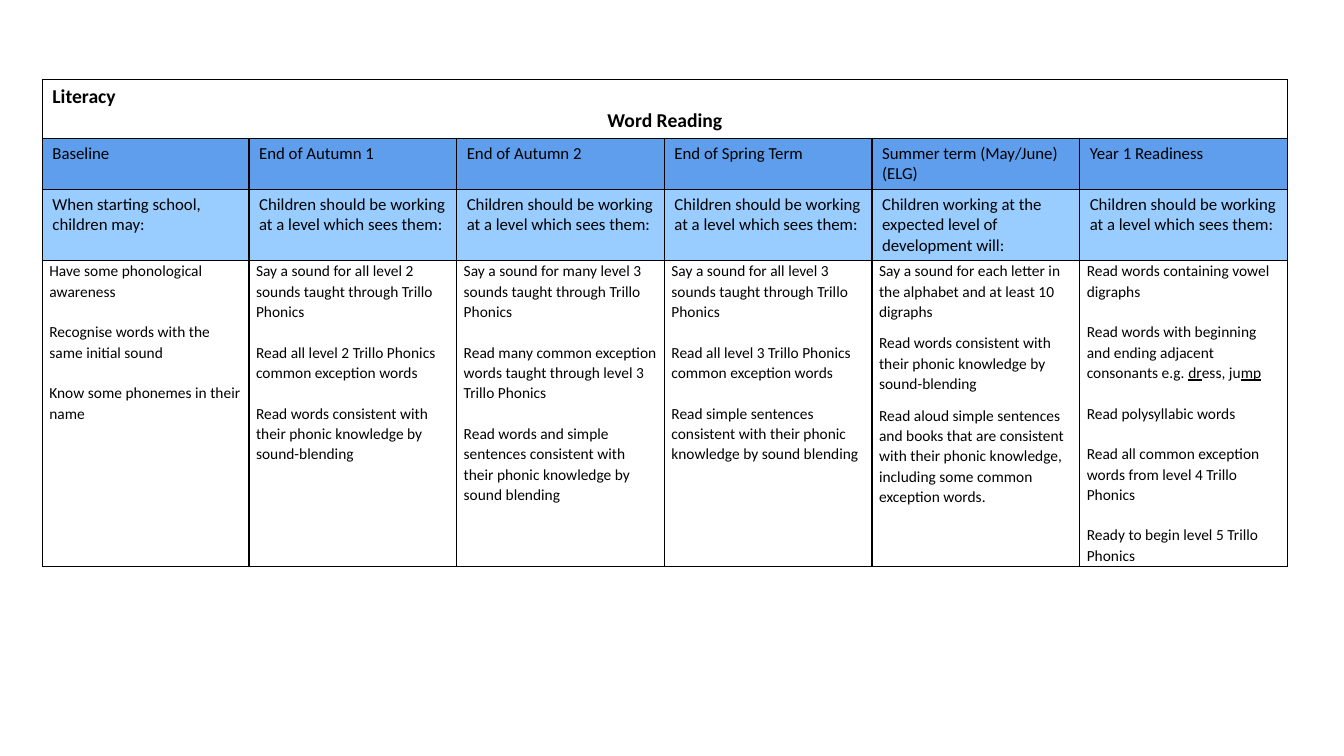
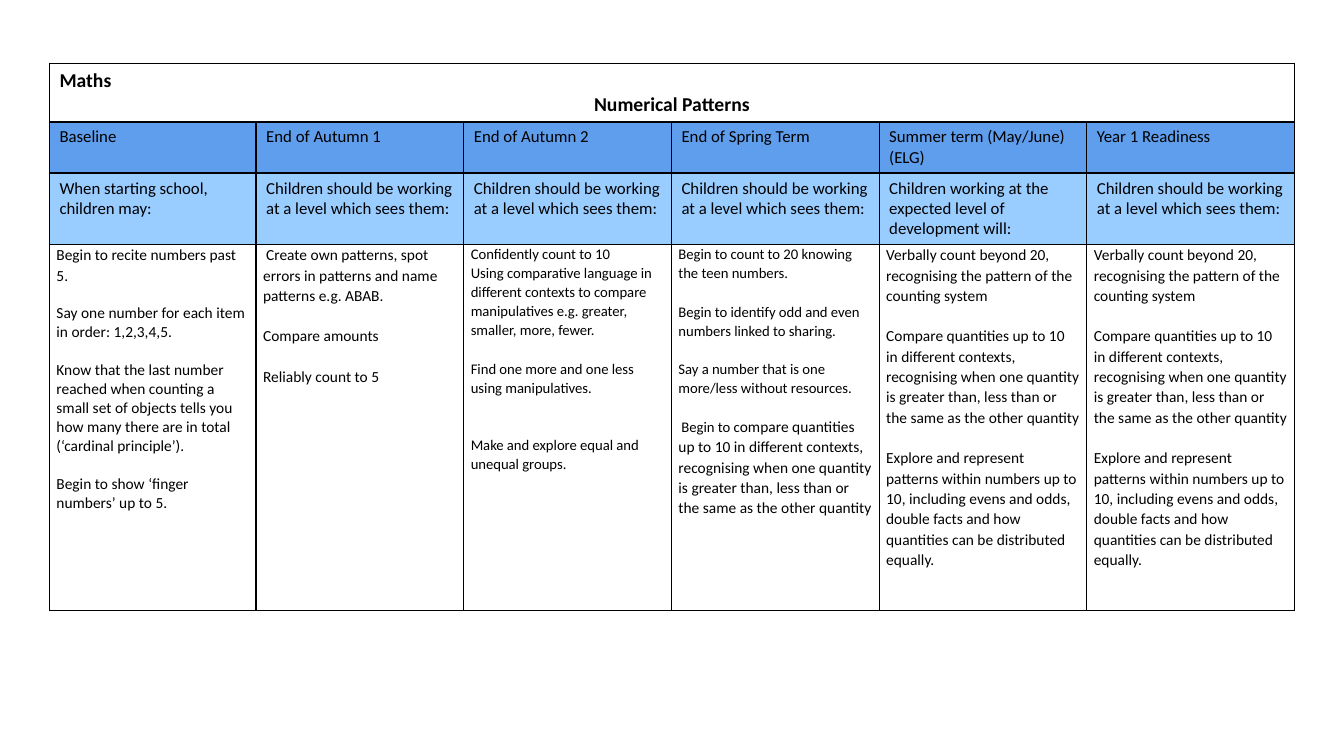
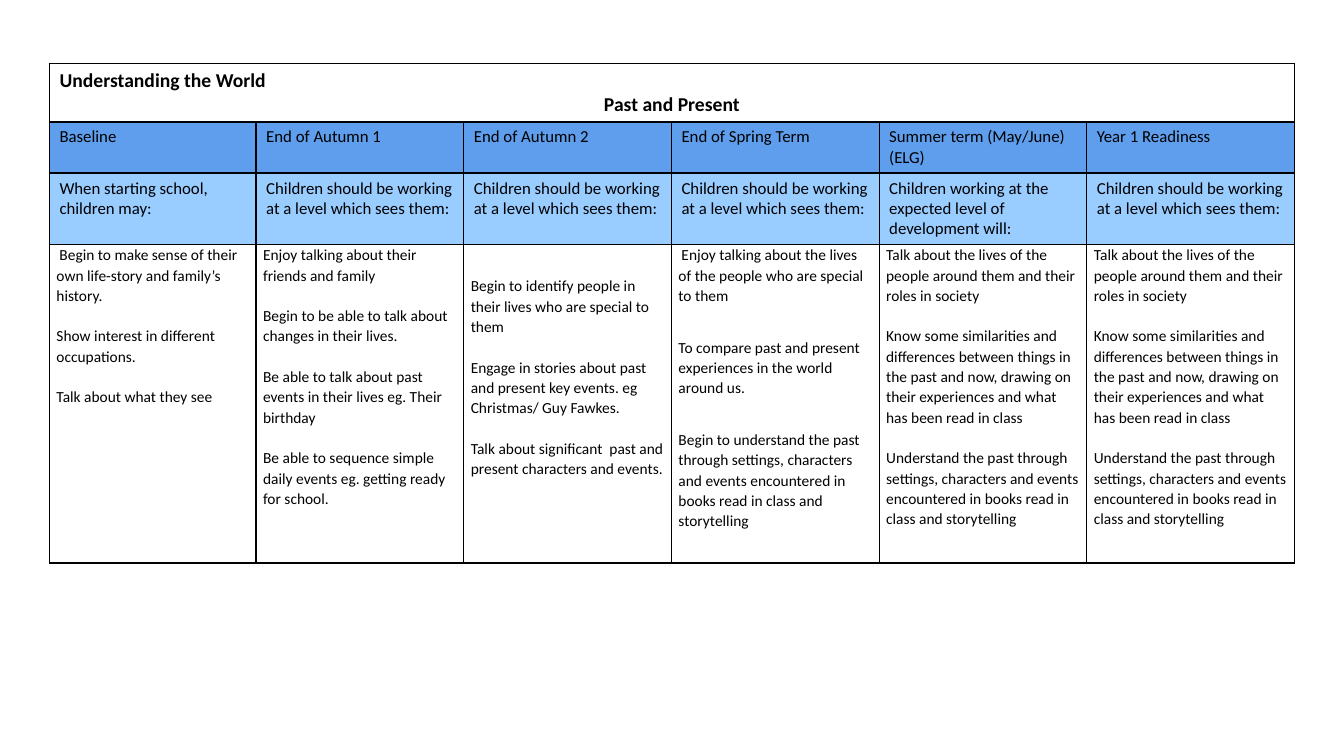
from dataclasses import dataclass, replace

from lxml.etree import SubElement
from pptx import Presentation
from pptx.dml.color import RGBColor
from pptx.enum.text import PP_ALIGN
from pptx.oxml.ns import qn
from pptx.util import Inches, Pt


@dataclass(frozen=True)
class Theme:
    font: str = "Calibri"
    ink: str = "000000"
    stage: str = "5E9EEC"
    lead: str = "99CCFF"
    title_size: float = 14
    head_size: float = 12
    body_size: float = 11
    small_size: float = 10.5
    line: float = 1.07
    border: float = 1


THEME = Theme()


@dataclass(frozen=True)
class Para:
    runs: str | tuple          # plain text, or (text, size, underline) runs
    gap: float = 14.5          # points above the paragraph
    size: float = THEME.body_size
    line: float = THEME.line
    indent: float = 0          # first line, inches


@dataclass(frozen=True)
class Goals:
    paras: tuple
    top: float = 0             # inches above the first paragraph


def goals(*items, top=0, **style):
    """Column of goals; the style applies to those given as plain text."""
    return Goals(tuple(i if isinstance(i, Para) else Para(i, **style)
                       for i in items), top)


# Content
SEES = "Children should be working at a level which sees them:"
STAGES = [
    ("Baseline", "When starting school, children may:"),
    ("End of Autumn 1", SEES),
    ("End of Autumn 2", SEES),
    ("End of Spring Term", SEES),
    ("Summer term (May/June) (ELG)",
     "Children working at the expected level of development will:"),
    ("Year 1 Readiness", SEES),
]

BODY, SMALL = THEME.body_size, THEME.small_size

WORD_READING = [
    goals("Have some phonological awareness",
          "Recognise words with the same initial sound",
          "Know some phonemes in their name"),
    goals("Say a sound for all level 2 sounds taught through Trillo Phonics",
          "Read all level 2 Trillo Phonics common exception words",
          "Read words consistent with their phonic knowledge by sound-blending"),
    goals("Say a sound for many level 3 sounds taught through Trillo Phonics",
          "Read many common exception words taught through level 3 Trillo Phonics",
          "Read words and simple sentences consistent with their phonic "
          "knowledge by sound blending"),
    goals("Say a sound for all level 3 sounds taught through Trillo Phonics",
          "Read all level 3 Trillo Phonics common exception words",
          "Read simple sentences consistent with their phonic knowledge by "
          "sound blending"),
    goals("Say a sound for each letter in the alphabet and at least 10 digraphs",
          "Read words consistent with their phonic knowledge by sound-blending",
          "Read aloud simple sentences and books that are consistent with their "
          "phonic knowledge, including some common exception words.",
          gap=8),
    goals("Read words containing vowel digraphs",
          Para((("Read words with beginning and ending adjacent consonants e.g. ",
                 BODY, False),
                ("dr", BODY, True), ("ess, ju", BODY, False), ("mp", BODY, True))),
          "Read polysyllabic words",
          "Read all common exception words from level 4 Trillo Phonics",
          "Ready to begin level 5 Trillo Phonics"),
]

PATTERN_GOALS = goals(
    "Verbally count beyond 20, recognising the pattern of the counting system",
    "Compare quantities up to 10 in different contexts, recognising when one "
    "quantity is greater than, less than or the same as the other quantity",
    "Explore and represent patterns within numbers up to 10, including evens "
    "and odds, double facts and how quantities can be distributed equally.")

NUMERICAL_PATTERNS = [
    goals(Para("Begin to recite numbers past 5."),
          "Say one number for each item in order: 1,2,3,4,5.",
          "Know that the last number reached when counting a small set of objects "
          "tells you how many there are in total (‘cardinal principle’).",
          "Begin to show ‘finger numbers’ up to 5.",
          gap=13.5, line=1),
    goals(Para("Create own patterns, spot errors in patterns and name patterns "
               "e.g. ABAB.", indent=0.03),
          "Compare amounts",
          "Reliably count to 5"),
    goals("Confidently count to 10",
          Para("Using comparative language in different contexts to compare "
               "manipulatives e.g. greater, smaller, more, fewer.",
               gap=0, size=SMALL),
          "Find one more and one less using manipulatives.",
          Para("Make and explore equal and unequal groups.", gap=27.5, size=SMALL),
          gap=13.7, size=SMALL),
    goals("Begin to count to 20 knowing the teen numbers.",
          "Begin to identify odd and even numbers linked to sharing.",
          "Say a number that is one more/less without resources.",
          Para((("Begin to c", SMALL, False),
                ("ompare quantities up to 10 in different contexts, recognising "
                 "when one quantity is greater than, less than or the same as the "
                 "other quantity", BODY, False)), gap=13.7, indent=0.03),
          gap=13.7, size=SMALL),
    PATTERN_GOALS,
    PATTERN_GOALS,
]

PAST_GOALS = goals(
    "Talk about the lives of the people around them and their roles in society",
    "Know some similarities and differences between things in the past and now, "
    "drawing on their experiences and what has been read in class",
    "Understand the past through settings, characters and events encountered in "
    "books read in class and storytelling")

PAST_AND_PRESENT = [
    goals(Para("Begin to make sense of their own life-story and family’s history.",
               indent=0.03),
          "Show interest in different occupations.",
          "Talk about what they see"),
    goals("Enjoy talking about their friends and family",
          "Begin to be able to talk about changes in their lives.",
          "Be able to talk about past events in their lives eg. Their birthday",
          "Be able to sequence simple daily events eg. getting ready for school."),
    goals("Begin to identify people in their lives who are special to them",
          "Engage in stories about past and present key events. eg Christmas/ "
          "Guy Fawkes.",
          "Talk about significant  past and present characters and events.",
          top=0.31),
    goals(Para("Enjoy talking about the lives of the people who are special to them",
               indent=0.03),
          "To compare past and present experiences in the world around us.",
          "Begin to understand the past through settings, characters and events "
          "encountered in books read in class and storytelling",
          gap=22.5),
    PAST_GOALS,
    PAST_GOALS,
]

# Area, strand, left, top, height of the goals row, goals by stage
SLIDES = [
    ("Literacy", "Word Reading", 0.42, 0.79, 3.03, WORD_READING),
    ("Maths", "Numerical Patterns", 0.49, 0.63, 3.63, NUMERICAL_PATTERNS),
    ("Understanding the World", "Past and Present", 0.49, 0.63, 3.16,
     PAST_AND_PRESENT),
]
COL_WIDTHS = [2.05] + [2.06] * (len(STAGES) - 1)
HEAD_HEIGHTS = [0.58, 0.5, 0.71]


# Cell helpers
def add_run(p, text, size, bold=False, underline=False):
    r = p.add_run()
    r.text = text
    f = r.font
    f.name, f.size, f.bold = THEME.font, Pt(size), bold
    f.color.rgb = RGBColor.from_string(THEME.ink)
    if underline:
        f.underline = True


def frame_cell(cell, fill=None):
    """Draw the four borders, then the fill."""
    tcPr = cell._tc.get_or_add_tcPr()
    for side in ("a:lnL", "a:lnR", "a:lnT", "a:lnB"):
        ln = SubElement(tcPr, qn(side), w=str(Pt(THEME.border)))
        SubElement(SubElement(ln, qn("a:solidFill")), qn("a:srgbClr"),
                   val=THEME.ink)
    if fill:
        cell.fill.solid()
        cell.fill.fore_color.rgb = RGBColor.from_string(fill)
    else:
        cell.fill.background()


def write_goals(cell, column):
    cell.margin_left = cell.margin_right = Inches(0.07)
    cell.margin_top, cell.margin_bottom = Inches(column.top), 0
    tf = cell.text_frame
    first = replace(column.paras[0], gap=0)
    for i, para in enumerate((first, *column.paras[1:])):
        p = tf.add_paragraph() if i else tf.paragraphs[0]
        p.line_spacing = para.line
        p.space_before = Pt(para.gap)
        if para.indent:
            p._p.get_or_add_pPr().set("indent", str(Inches(para.indent)))
        runs = para.runs
        if isinstance(runs, str):
            runs = ((runs, para.size, False),)
        for text, size, underline in runs:
            add_run(p, text, size, underline=underline)


# One slide: title row, two header rows, goals row
def add_stage_slide(prs, area, strand, left, top, goals_height, columns):
    s = prs.slides.add_slide(prs.slide_layouts[6])
    heights = HEAD_HEIGHTS + [goals_height]
    table = s.shapes.add_table(
        len(heights), len(STAGES), Inches(left), Inches(top),
        Inches(sum(COL_WIDTHS)), Inches(sum(heights))).table
    table.first_row = table.horz_banding = False
    for col, width in zip(table.columns, COL_WIDTHS):
        col.width = Inches(width)
    for row, height in zip(table.rows, heights):
        row.height = Inches(height)

    for row, fill in enumerate((None, THEME.stage, THEME.lead, None)):
        for col in range(len(STAGES)):
            frame_cell(table.cell(row, col), fill)

    title = table.cell(0, 0)
    title.merge(table.cell(0, len(STAGES) - 1))
    tf = title.text_frame
    add_run(tf.paragraphs[0], area, THEME.title_size, bold=True)
    p = tf.add_paragraph()
    p.alignment = PP_ALIGN.CENTER
    add_run(p, strand, THEME.title_size, bold=True)

    for col, (heads, column) in enumerate(zip(STAGES, columns)):
        for row, text in enumerate(heads, start=1):
            add_run(table.cell(row, col).text_frame.paragraphs[0], text,
                    THEME.head_size)
        write_goals(table.cell(3, col), column)


def main():
    prs = Presentation()
    prs.slide_width, prs.slide_height = Inches(13.33), Inches(7.5)
    for content in SLIDES:
        add_stage_slide(prs, *content)
    prs.save("out.pptx")


if __name__ == "__main__":
    main()
